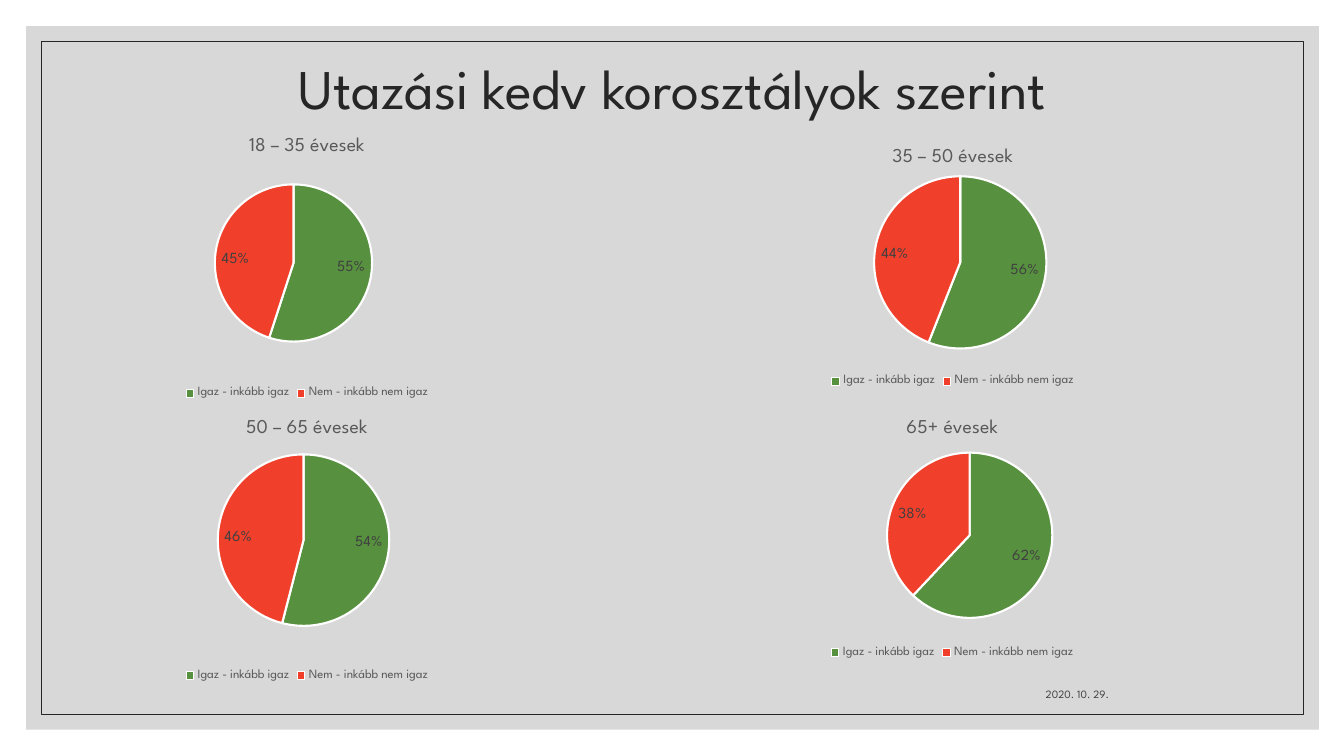
"""Build the slide comparing willingness to travel across four age groups."""
from dataclasses import dataclass

from lxml.etree import SubElement
from pptx import Presentation
from pptx.chart.data import CategoryChartData
from pptx.dml.color import RGBColor
from pptx.enum.chart import XL_CHART_TYPE, XL_LABEL_POSITION, XL_LEGEND_POSITION
from pptx.enum.shapes import MSO_SHAPE
from pptx.enum.text import MSO_ANCHOR, PP_ALIGN
from pptx.oxml import parse_xml
from pptx.oxml.ns import nsdecls, qn
from pptx.util import Emu, Pt

PX = 9144
FONT = "League Spartan"
COLORS = {
    "panel": "BFBFBF", "ink": "262626", "label": "404040", "caption": "595959",
    "true": "57903F", "false": "F03F2B", "border": "FFFFFF", "chart": "000000",
}
CATEGORIES = {"Igaz - inkább igaz": "true", "Nem - inkább nem igaz": "false"}


@dataclass(frozen=True)
class Area:
    """A rectangle in px."""
    left: int
    top: int
    width: int
    height: int

    def emu(self) -> tuple[Emu, ...]:
        """Return the rectangle in EMU."""
        return tuple(Emu(n * PX) for n in (self.left, self.top, self.width, self.height))


@dataclass(frozen=True)
class AgeGroup:
    """A pie chart, with its pie given in px within the chart."""
    title: str
    area: Area
    pie: Area
    true_percent: int


@dataclass(frozen=True)
class Caption:
    """A single line of text on the slide."""
    text: str
    area: Area
    size: int
    color: str
    align: PP_ALIGN
    anchor: MSO_ANCHOR
    spacing: float


CAPTIONS = (
    Caption("Utazási kedv korosztályok szerint", Area(117, 50, 1100, 81), 40, "ink",
            PP_ALIGN.CENTER, MSO_ANCHOR.MIDDLE, 0.9),
    Caption("2020. 10. 29.", Area(794, 660, 316, 40), 8, "label",
            PP_ALIGN.RIGHT, MSO_ANCHOR.BOTTOM, 1.0),
)
AGE_GROUPS = (
    AgeGroup("18 – 35 évesek", Area(61, 120, 487, 280), Area(150, 63, 160, 156), 55),
    AgeGroup("35 – 50 évesek", Area(733, 131, 424, 257), Area(134, 43, 171, 173), 56),
    AgeGroup("50 – 65 évesek", Area(74, 400, 461, 280), Area(142, 44, 170, 184), 54),
    AgeGroup("65+ évesek", Area(714, 400, 461, 257), Area(161, 49, 174, 164), 62),
)


def rgb(name: str) -> RGBColor:
    """Look up a colour by name."""
    return RGBColor.from_string(COLORS[name])


def set_font(font, size: int, color: str) -> None:
    """Apply the slide's typeface with a size and colour."""
    font.name, font.size, font.bold = FONT, Pt(size), False
    font.color.rgb = rgb(color)


def add_background(page) -> None:
    """Draw the translucent panel and the thin frame."""
    panel = page.shapes.add_shape(MSO_SHAPE.RECTANGLE, *Area(26, 26, 1282, 698).emu())
    panel.shadow.inherit = False
    panel.fill.solid()
    panel.fill.fore_color.rgb = rgb("panel")
    panel.line.fill.background()
    color = panel.fill._xPr.find(f"{qn('a:solidFill')}/{qn('a:srgbClr')}")
    SubElement(color, qn("a:alpha"), val="60000")

    frame = page.shapes.add_shape(MSO_SHAPE.RECTANGLE, *Area(41, 41, 1252, 668).emu())
    frame.shadow.inherit = False
    frame.fill.background()
    frame.line.color.rgb = rgb("ink")
    frame.line.width = Pt(0.5)


def add_caption(page, caption: Caption) -> None:
    """Add one line of text."""
    box = page.shapes.add_textbox(*caption.area.emu())
    box.text_frame.word_wrap = True
    box.text_frame.vertical_anchor = caption.anchor
    para = box.text_frame.paragraphs[0]
    para.text = caption.text
    para.alignment = caption.align
    para.line_spacing = caption.spacing
    set_font(para.font, caption.size, caption.color)


def place_pie(chart, group: AgeGroup) -> None:
    """Fix the inner plot area to the group's pie rectangle."""
    shares = {
        "x": group.pie.left / group.area.width,
        "y": group.pie.top / group.area.height,
        "w": group.pie.width / group.area.width,
        "h": group.pie.height / group.area.height,
    }
    values = "".join(f'<c:{key} val="{share:.3f}"/>' for key, share in shares.items())
    layout = parse_xml(
        f'<c:layout {nsdecls("c")}><c:manualLayout><c:layoutTarget val="inner"/>'
        f'<c:xMode val="edge"/><c:yMode val="edge"/>{values}</c:manualLayout></c:layout>')
    plot_area = chart.element.find(f"{qn('c:chart')}/{qn('c:plotArea')}")
    for old_layout in plot_area.findall(qn("c:layout")):
        plot_area.remove(old_layout)
    plot_area.insert(0, layout)


def add_age_group(page, group: AgeGroup) -> None:
    """Add the pie chart of one age group."""
    data = CategoryChartData(number_format="0%")
    data.categories = list(CATEGORIES)
    data.add_series("Series 1", (group.true_percent / 100, (100 - group.true_percent) / 100))
    chart = page.shapes.add_chart(XL_CHART_TYPE.PIE, *group.area.emu(), data).chart
    set_font(chart.font, 10, "chart")

    chart.has_title = True
    para = chart.chart_title.text_frame.paragraphs[0]
    para.text = group.title
    set_font(para.font, 14, "caption")
    chart.chart_title.include_in_layout = False

    chart.has_legend = True
    chart.legend.position = XL_LEGEND_POSITION.BOTTOM
    chart.legend.include_in_layout = False
    set_font(chart.legend.font, 9, "caption")

    plot = chart.plots[0]
    plot.vary_by_categories = True
    for index, color in enumerate(CATEGORIES.values()):
        point = plot.series[0].points[index]
        point.format.fill.solid()
        point.format.fill.fore_color.rgb = rgb(color)
        point.format.line.color.rgb = rgb("border")
        point.format.line.width = Pt(1.5)

    labels = plot.series[0].data_labels
    labels.show_value = True
    labels.number_format, labels.number_format_is_linked = "0%", False
    labels.position = XL_LABEL_POSITION.INSIDE_END
    set_font(labels.font, 11, "label")
    place_pie(chart, group)


def main() -> None:
    """Build and save the deck."""
    deck = Presentation()
    deck.slide_width, deck.slide_height = Emu(1333 * PX), Emu(750 * PX)
    page = deck.slides.add_slide(deck.slide_layouts[6])
    add_background(page)
    for caption in CAPTIONS:
        add_caption(page, caption)
    for group in AGE_GROUPS:
        add_age_group(page, group)
    deck.save("out.pptx")


if __name__ == "__main__":
    main()
